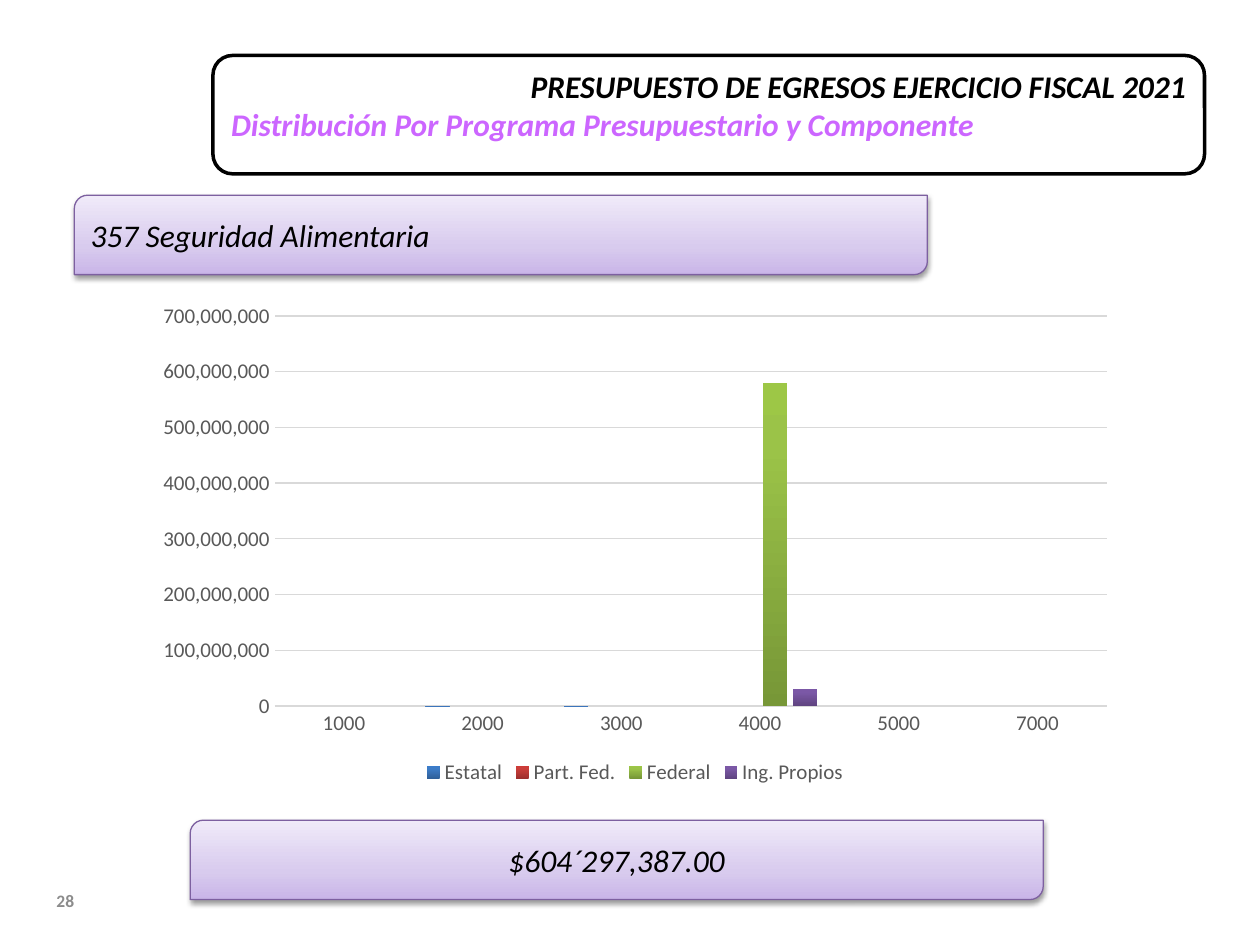
from lxml import etree
from pptx import Presentation
from pptx.chart.data import CategoryChartData
from pptx.dml.color import RGBColor
from pptx.enum.chart import XL_CHART_TYPE, XL_LEGEND_POSITION, XL_TICK_MARK
from pptx.enum.shapes import MSO_SHAPE
from pptx.enum.text import MSO_ANCHOR, PP_ALIGN
from pptx.oxml import parse_xml
from pptx.oxml.ns import nsdecls, qn
from pptx.util import Inches, Pt

HUE = {
    "black": "000000", "pink": "CC66FF", "edge": "7D60A0",
    "page": "8C8C8C", "label": "595959", "grid": "D9D9D9",
}
BAND = [(0, "C9B5E8"), (35, "D8CBEE"), (100, "F0EAF9")]
FONT = {"name": "Calibri", "size": Pt(18), "bold": False, "italic": True}
SMALL = {"name": "Calibri", "size": Pt(12), "bold": False}


def style(font, form, hue):
    for key, val in form.items():
        setattr(font, key, val)
    font.color.rgb = RGBColor.from_string(HUE[hue])


def shade(node, stops):
    """Swap the first solid fill in node for a gradient that runs upward."""
    grad = parse_xml(f'<a:gradFill {nsdecls("a")} rotWithShape="1"><a:gsLst/>'
                     '<a:lin ang="16200000" scaled="0"/></a:gradFill>')
    for pos, hue in stops:
        stop = etree.SubElement(grad[0], qn("a:gs"), pos=str(pos * 1000))
        etree.SubElement(stop, qn("a:srgbClr"), val=hue)
    solid = next(node.iter(qn("a:solidFill")))
    solid.getparent().replace(solid, grad)


prs = Presentation()
prs.slide_width, prs.slide_height = Inches(10), Inches(7.5)
slide = prs.slides.add_slide(prs.slide_layouts[6])
shapes = slide.shapes

# Page number
box = shapes.add_textbox(Inches(0.35), Inches(6.95), Inches(2.33), Inches(0.4))
frame = box.text_frame
frame.word_wrap = True
frame.vertical_anchor = MSO_ANCHOR.MIDDLE
frame.text = "28"
style(frame.paragraphs[0].font,
      {"name": "Calibri", "size": Pt(10), "bold": True}, "page")

# Title frame
head = shapes.add_shape(MSO_SHAPE.ROUNDED_RECTANGLE, Inches(1.69), Inches(0.44),
                        Inches(7.87), Inches(0.94))
head.shadow.inherit = False
head.fill.background()
head.line.color.rgb = RGBColor.from_string(HUE["black"])
head.line.width = Pt(2)
frame = head.text_frame
frame.word_wrap = True
frame.vertical_anchor = MSO_ANCHOR.TOP
frame.text = ("PRESUPUESTO DE EGRESOS EJERCICIO FISCAL 2021\n"
              "Distribución Por Programa Presupuestario y Componente")
looks = [(PP_ALIGN.RIGHT, "black"), (PP_ALIGN.JUSTIFY, "pink")]
for para, (align, hue) in zip(frame.paragraphs, looks):
    para.alignment = align
    style(para.font, {**FONT, "bold": True}, hue)

# Spending by chapter and source of funds
data = CategoryChartData(number_format="#,##0")
data.categories = ["1000", "2000", "3000", "4000", "5000", "7000"]
funds = [
    ("Estatal", {1: 0, 2: 0}, ["2F5F99", "3D7CC7", "3A7CCB"]),
    ("Part. Fed.", {}, ["9C2F2D", "CB3E3A", "CE3B37"]),
    ("Federal", {3: 580000000}, ["779737", "9BC348", "9DC746"]),
    ("Ing. Propios", {3: 30000000}, ["5F4480", "7B58A6", "7C57A8"]),
]
for name, vals, hues in funds:
    data.add_series(name, [vals.get(i) for i in range(6)])
chart = shapes.add_chart(XL_CHART_TYPE.COLUMN_CLUSTERED, Inches(1.14),
                         Inches(2.33), Inches(7.8), Inches(3.94), data).chart
style(chart.font, SMALL, "black")
chart.has_title = False
chart.has_legend = True
chart.legend.position = XL_LEGEND_POSITION.BOTTOM
chart.legend.include_in_layout = False
style(chart.legend.font, SMALL, "label")

plot = chart.plots[0]
plot.vary_by_categories = False
plot.gap_width, plot.overlap = 100, -24
for bars, (name, vals, hues) in zip(plot.series, funds):
    bars.format.fill.solid()
    bars.format.fill.fore_color.rgb = RGBColor.from_string(hues[0])
    bars.invert_if_negative = False
    shade(bars.format.fill._xPr, zip((0, 80, 100), hues))

# Axes
cat, val = chart.category_axis, chart.value_axis
for axis in (cat, val):
    axis.major_tick_mark = axis.minor_tick_mark = XL_TICK_MARK.NONE
    style(axis.tick_labels.font, SMALL, "label")
val.minimum_scale, val.maximum_scale, val.major_unit = 0, 700000000, 100000000
val.tick_labels.number_format = "#,##0"
val.tick_labels.number_format_is_linked = False
val.format.line.fill.background()
for line, width in ((cat.format.line, 1), (val.major_gridlines.format.line, 0.75)):
    line.color.rgb = RGBColor.from_string(HUE["grid"])
    line.width = Pt(width)

# Program and total bands
bands = [
    (0.59, 1.55, "357 Seguridad Alimentaria", PP_ALIGN.LEFT),
    (1.51, 6.51, "$604´297,387.00", PP_ALIGN.CENTER),
]
for left, top, text, align in bands:
    band = shapes.add_shape(MSO_SHAPE.ROUND_2_DIAG_RECTANGLE, Inches(left),
                            Inches(top), Inches(6.77), Inches(0.63))
    band.fill.solid()
    shade(band._element.spPr, BAND)
    band.line.color.rgb = RGBColor.from_string(HUE["edge"])
    band.line.width = Pt(0.75)
    band.shadow.inherit = False
    band._element.spPr.find(qn("a:effectLst")).append(parse_xml(
        f'<a:outerShdw {nsdecls("a")} blurRad="40000" dist="20000" dir="5400000" '
        'rotWithShape="0"><a:srgbClr val="000000"><a:alpha val="38000"/>'
        '</a:srgbClr></a:outerShdw>'))
    frame = band.text_frame
    frame.word_wrap = True
    frame.vertical_anchor = MSO_ANCHOR.MIDDLE
    frame.text = text
    frame.paragraphs[0].alignment = align
    style(frame.paragraphs[0].font, FONT, "black")

prs.save("out.pptx")
